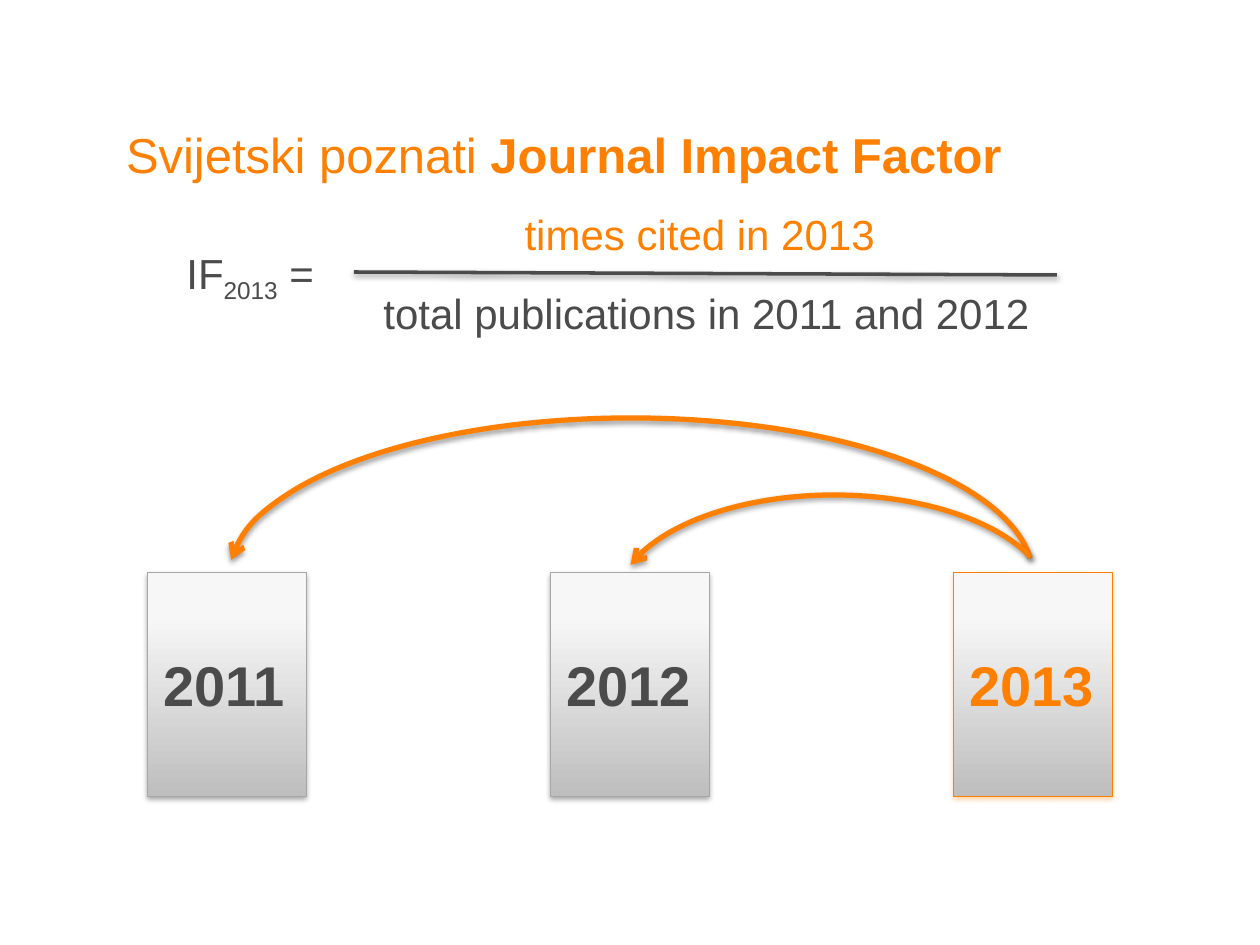
"""Build a slide that explains the Journal Impact Factor for 2013."""
from lxml import etree
from pptx import Presentation
from pptx.dml.color import RGBColor
from pptx.enum.shapes import MSO_CONNECTOR, MSO_SHAPE
from pptx.enum.text import MSO_ANCHOR, MSO_AUTO_SIZE, PP_ALIGN
from pptx.oxml.ns import qn
from pptx.util import Pt

PX = 914400 / 126
RECTANGLE, ARC = MSO_SHAPE.RECTANGLE, MSO_SHAPE.ARC
STRAIGHT = MSO_CONNECTOR.STRAIGHT
BOTTOM, FIT_SHAPE = MSO_ANCHOR.BOTTOM, MSO_AUTO_SIZE.SHAPE_TO_FIT_TEXT
LEFT, CENTER = PP_ALIGN.LEFT, PP_ALIGN.CENTER
COLORS = {
    "orange": "FF8000",
    "text": "4B4B4B",
    "border": "A6A6A6",
    "card_dark": "BEBEBE",
    "card_light": "F7F7F7",
    "shadow": "000000",
}
RGB = {name: RGBColor.from_string(value) for name, value in COLORS.items()}


def add_shadow(shape, color, opacity, distance):
    effects = etree.SubElement(shape._element.spPr, qn("a:effectLst"))
    shadow = etree.SubElement(
        effects, qn("a:outerShdw"), blurRad=str(Pt(3.1)), dist=str(Pt(distance)),
        dir="5400000", rotWithShape="0")
    tint = etree.SubElement(shadow, qn("a:srgbClr"), val=COLORS[color])
    etree.SubElement(tint, qn("a:alpha"), val=str(opacity * 1000))


def add_text(shapes, bounds, spans, size, color, align=LEFT):
    box = shapes.add_textbox(*[round(length * PX) for length in bounds])
    frame = box.text_frame
    frame.word_wrap = False
    frame.auto_size = FIT_SHAPE
    para = frame.paragraphs[0]
    para.alignment = align
    for text, bold in spans:
        span = para.add_run()
        span.text = text
        span.font.name = "Arial"
        span.font.size = Pt(size)
        span.font.bold = bold
        span.font.color.rgb = RGB[color]
    return box


deck = Presentation()
deck.slide_width, deck.slide_height = round(1260 * PX), round(945 * PX)
page = deck.slides.add_slide(deck.slide_layouts[6])

title = add_text(
    page.shapes, (126, 69, 1016, 115),
    [("Svijetski poznati ", False), ("Journal Impact Factor", True)], 28, "orange")
frame = title.text_frame
frame.auto_size = None
frame.word_wrap = True
frame.vertical_anchor = BOTTOM
frame.margin_left = frame.margin_right = frame.margin_top = frame.margin_bottom = 0
frame.paragraphs[0].line_spacing = 0.9

years = [("2011", 147, "text", "border", "shadow"),
         ("2012", 151, "text", "border", "shadow"),
         ("2013", 151, "orange", "orange", "orange")]
for index, (year, text_width, text_color, line_color, shadow_color) in enumerate(years):
    left = 147 + 403 * index
    group = page.shapes.add_group_shape()
    card = group.shapes.add_shape(
        RECTANGLE, *[round(length * PX) for length in (left, 572, 159, 224)])
    card.fill.gradient()
    card.fill.gradient_angle = 90
    stops = card.fill.gradient_stops
    for stop, position, color in zip(stops, (0, 0.8), ("card_dark", "card_light")):
        stop.position = position
        stop.color.rgb = RGB[color]
    card.line.color.rgb = RGB[line_color]
    card.line.width = Pt(0.25)
    add_shadow(card, shadow_color, 35, 1.8)
    add_text(group.shapes, (left + 4, 644, text_width, 81), [(year, True)], 32, text_color)

arcs = [((229, 418, 804, 318), (109.47, 214.38)),
        ((616, 495, 436, 218), (114.54, 207.93))]
for bounds, angles in arcs:
    arc = page.shapes.add_shape(ARC, *[round(length * PX) for length in bounds])
    arc.adjustments[0], arc.adjustments[1] = angles
    arc.fill.background()
    arc.line.color.rgb = RGB["orange"]
    arc.line.width = Pt(3)
    etree.SubElement(arc._element.spPr.find(qn("a:ln")), qn("a:headEnd"), type="arrow")
    add_shadow(arc, "shadow", 38, 1.6)

factor = add_text(page.shapes, (174, 241, 163, 63),
                  [("IF", False), ("2013", False), (" =", False)], 24, "text")
subscript = factor.text_frame.paragraphs[0].runs[1]
subscript.font._element.set("baseline", "-25000")
add_text(page.shapes, (510, 202, 391, 63), [("times cited in 2013 ", False)],
         24, "orange", CENTER)
add_text(page.shapes, (367, 281, 679, 63), [("total publications in 2011 and 2012", False)],
         24, "text", CENTER)

fraction_bar = page.shapes.add_connector(
    STRAIGHT, *[round(length * PX) for length in (354, 272, 1057, 275)])
fraction_bar.line.color.rgb = RGB["text"]
fraction_bar.line.width = Pt(2)
add_shadow(fraction_bar, "shadow", 38, 1.6)

deck.save("out.pptx")
